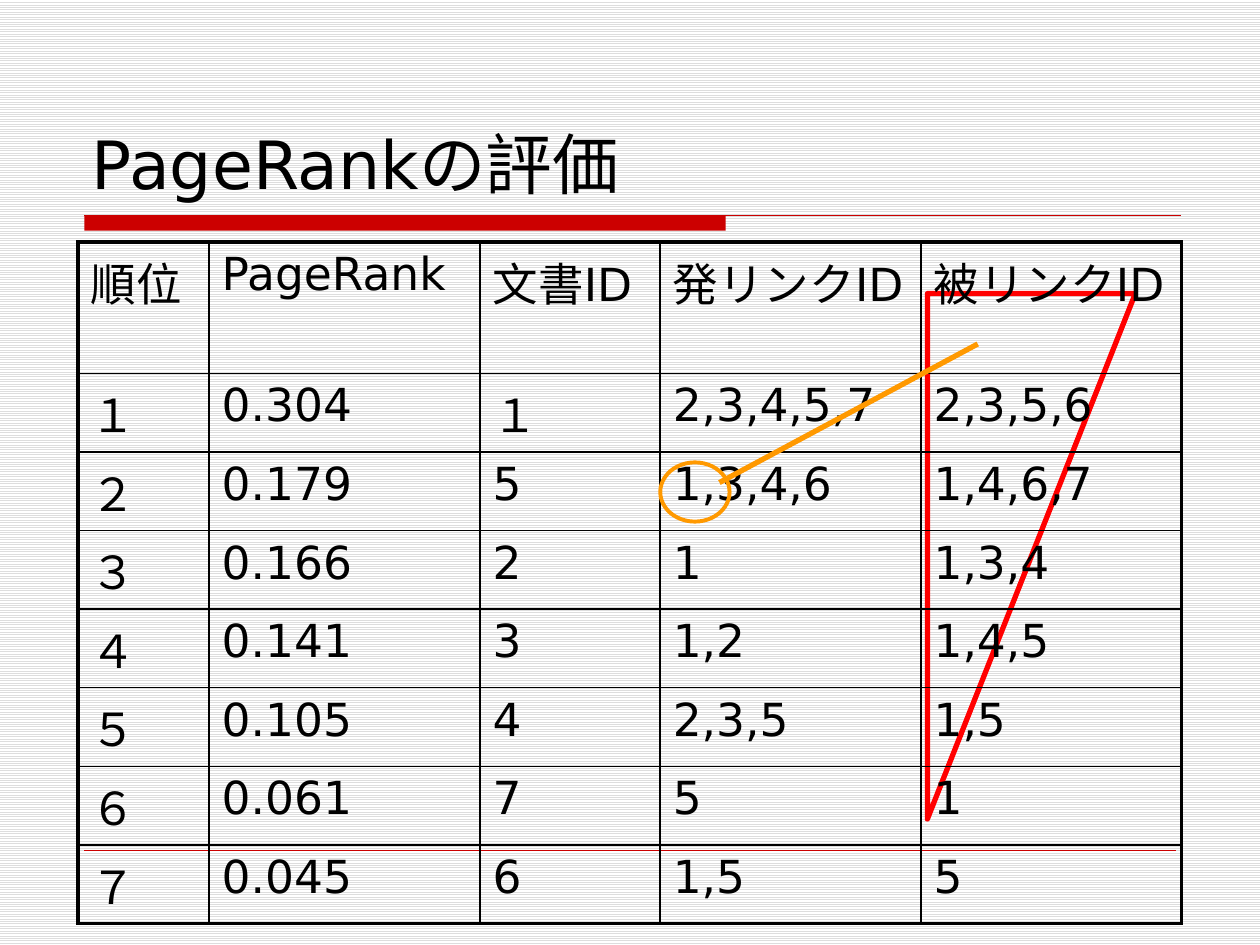
from lxml import etree
from pptx import Presentation
from pptx.dml.color import RGBColor
from pptx.enum.dml import MSO_PATTERN
from pptx.enum.shapes import MSO_CONNECTOR, MSO_SHAPE
from pptx.enum.text import MSO_ANCHOR, PP_ALIGN
from pptx.oxml.ns import qn
from pptx.util import Inches, Pt

STRIPES = MSO_PATTERN.LIGHT_HORIZONTAL
STRAIGHT = MSO_CONNECTOR.STRAIGHT
RECTANGLE = MSO_SHAPE.RECTANGLE
RIGHT_TRIANGLE = MSO_SHAPE.RIGHT_TRIANGLE
OVAL = MSO_SHAPE.OVAL
BOTTOM = MSO_ANCHOR.BOTTOM
LEFT = PP_ALIGN.LEFT

FONT = "DejaVu Sans"
BLACK, CRIMSON, RED, ORANGE = "000000", "CC0000", "FF0000", "FF9900"
COLUMN_WIDTHS = [1.04, 2.15, 1.43, 2.07, 2.07]
ROW_HEIGHT = 0.6
RANKING = [
    ["順位", "PageRank", "文書ID", "発リンクID", "被リンクID"],
    ["１", "0.304", "１", "2,3,4,5,7", "2,3,5,6"],
    ["２", "0.179", "5", "1,3,4,6", "1,4,6,7"],
    ["３", "0.166", "2", "1", "1,3,4"],
    ["４", "0.141", "3", "1,2", "1,4,5"],
    ["５", "0.105", "4", "2,3,5", "1,5"],
    ["６", "0.061", "7", "5", "1"],
    ["７", "0.045", "6", "1,5", "5"],
]


def color(hex_code):
    """Return the colour for a hex string."""
    return RGBColor.from_string(hex_code)


def box(left, top, width, height):
    """Return a position and size in inches."""
    return [Inches(length) for length in (left, top, width, height)]


def style_font(paragraph, size):
    """Give a paragraph the slide's typeface in black."""
    paragraph.font.name = FONT
    paragraph.font.size = Pt(size)
    paragraph.font.color.rgb = color(BLACK)


def set_space_before(paragraph, percent):
    """Set the space before a paragraph as a share of its line height."""
    spacing = etree.SubElement(paragraph._p.get_or_add_pPr(), qn("a:spcBef"))
    etree.SubElement(spacing, qn("a:spcPct"), val=str(percent * 1000))


def paint_background(slide):
    """Fill the background with light horizontal stripes."""
    fill = slide.background.fill
    fill.patterned()
    fill.pattern = STRIPES
    fill.fore_color.rgb = color("DDDDDD")
    fill.back_color.rgb = color("FFFFFF")


def add_line(shapes, start, end, hex_code, width):
    """Draw a straight line without a shadow."""
    line = shapes.add_connector(STRAIGHT, *box(*start, *end))
    line.line.color.rgb = color(hex_code)
    line.line.width = Pt(width)
    etree.SubElement(line._element.spPr, qn("a:effectLst"))


def add_outline(shapes, preset, frame, hex_code, width):
    """Draw an unfilled preset shape."""
    outline = shapes.add_shape(preset, *box(*frame))
    outline.shadow.inherit = False
    outline.fill.background()
    outline.line.color.rgb = color(hex_code)
    outline.line.width = Pt(width)
    return outline


def add_bar(shapes, frame, hex_code):
    """Draw a solid bar without an outline."""
    bar = shapes.add_shape(RECTANGLE, *box(*frame))
    bar.shadow.inherit = False
    bar.fill.solid()
    bar.fill.fore_color.rgb = color(hex_code)
    bar.line.fill.background()


def set_title(title, text):
    """Place and format the title."""
    title.left, title.top, title.width, title.height = box(0.63, 0.33, 8.75, 1.33)
    title.text_frame.text = text
    title.text_frame.vertical_anchor = BOTTOM
    heading = title.text_frame.paragraphs[0]
    heading.alignment = LEFT
    style_font(heading, 38)


def set_border(cell, side, width):
    """Add a black border to one side of a cell."""
    border = etree.SubElement(
        cell._tc.get_or_add_tcPr(), qn(f"a:ln{side}"), w=str(int(Pt(width))))
    fill = etree.SubElement(border, qn("a:solidFill"))
    etree.SubElement(fill, qn("a:srgbClr"), val=BLACK)


def add_ranking(shapes):
    """Build the ranking table with a heavier outer border."""
    last_row, last_column = len(RANKING) - 1, len(COLUMN_WIDTHS) - 1
    frame = box(0.62, 1.92, sum(COLUMN_WIDTHS), ROW_HEIGHT * len(RANKING))
    table = shapes.add_table(len(RANKING), len(COLUMN_WIDTHS), *frame).table
    table.first_row = table.horz_banding = False
    for column, width in zip(table.columns, COLUMN_WIDTHS):
        column.width = Inches(width)
    for row, entries in enumerate(RANKING):
        for column, entry in enumerate(entries):
            cell = table.cell(row, column)
            cell.text = entry
            paragraph = cell.text_frame.paragraphs[0]
            set_space_before(paragraph, 20)
            style_font(paragraph, 26)
            outer_sides = {"L": column == 0, "R": column == last_column,
                           "T": row == 0, "B": row == last_row}
            for side, is_outer in outer_sides.items():
                set_border(cell, side, 2.25 if is_outer else 1)
            cell.fill.background()


def main():
    """Build and save the slide."""
    presentation = Presentation()
    presentation.slide_width, presentation.slide_height = Inches(10), Inches(7.5)
    slide = presentation.slides.add_slide(presentation.slide_layouts[5])
    shapes = slide.shapes
    paint_background(slide)
    add_bar(shapes, (0.67, 1.71, 5.09, 0.12), CRIMSON)
    add_line(shapes, (0.67, 1.71), (9.37, 1.71), CRIMSON, 0.75)
    add_line(shapes, (0.67, 6.75), (9.33, 6.75), CRIMSON, 0.25)
    backlinks = add_outline(shapes, RIGHT_TRIANGLE, (7.36, 2.33, 1.65, 4.17), RED, 3)
    backlinks.rotation = 180
    backlinks._element.spPr.xfrm.set("flipH", "1")
    set_title(shapes.title, "PageRankの評価")
    add_ranking(shapes)
    link_mark = shapes.add_group_shape().shapes
    add_outline(link_mark, OVAL, (5.24, 3.67, 0.55, 0.47), ORANGE, 2.25)
    add_line(link_mark, (5.71, 3.83), (7.76, 2.73), ORANGE, 3)
    presentation.save("out.pptx")


if __name__ == "__main__":
    main()
